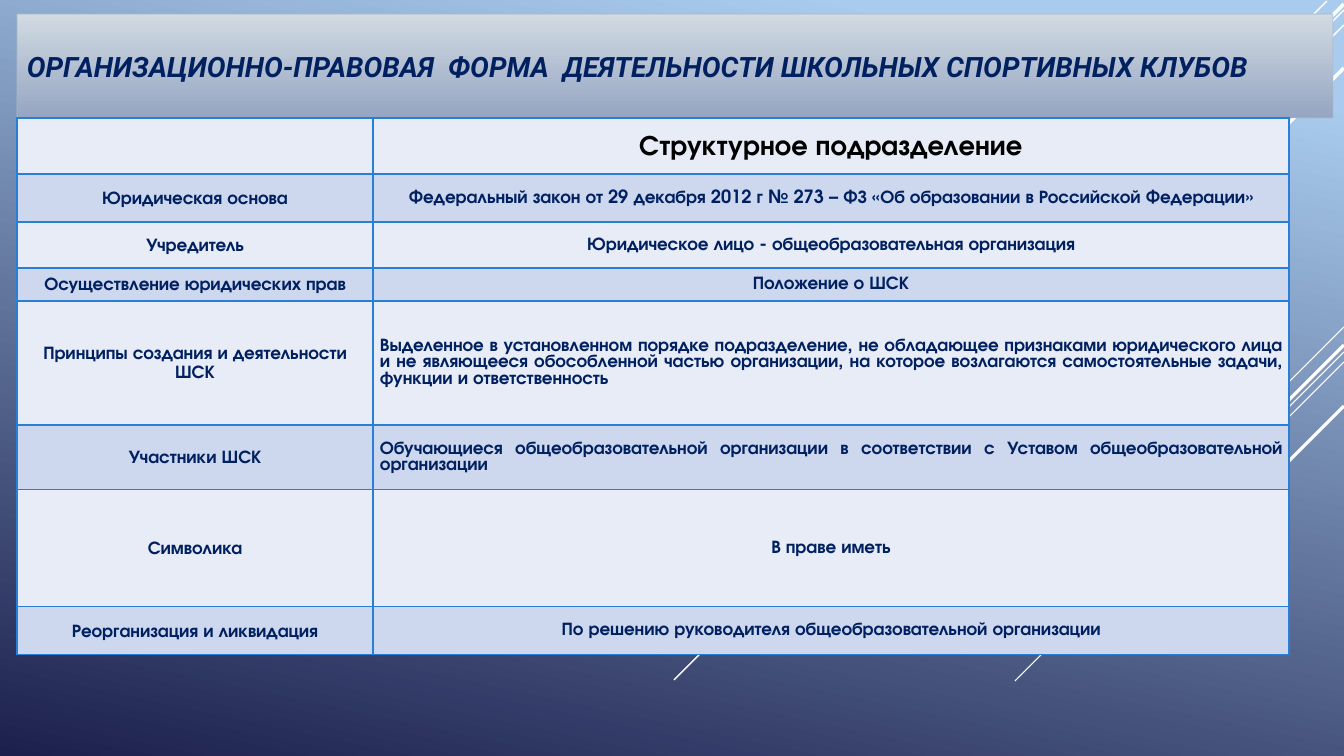
import lxml.etree
import pptx
import pptx.dml.color
import pptx.enum.shapes
import pptx.enum.text
import pptx.oxml
import pptx.oxml.ns
import pptx.util

RGBColor = pptx.dml.color.RGBColor
WHITE = RGBColor(0xFF, 0xFF, 0xFF)
BLACK = RGBColor(0x00, 0x00, 0x00)
NAVY = RGBColor(0x00, 0x20, 0x60)
SKY = RGBColor(0xA9, 0xCC, 0xEE)
MIDNIGHT = RGBColor(0x1C, 0x20, 0x4D)
SILVER = RGBColor(0xD2, 0xDB, 0xE2)
STEEL = RGBColor(0x95, 0xA5, 0xC3)
TITLE_EDGE = RGBColor(0xAA, 0xB8, 0xC2)
TABLE_BORDER = RGBColor(0x29, 0x7F, 0xD5)
ROW_FILLS = (RGBColor(0xE8, 0xEC, 0xF7), RGBColor(0xCD, 0xD8, 0xEF))

TITLE_FONT = "Roboto"
TABLE_FONT = "TeX Gyre Adventor"
CENTER = pptx.enum.text.PP_ALIGN.CENTER
JUSTIFY = pptx.enum.text.PP_ALIGN.JUSTIFY
MIDDLE = pptx.enum.text.MSO_ANCHOR.MIDDLE

WIDTH, HEIGHT = 1344, 756
TITLE = "ОРГАНИЗАЦИОННО-ПРАВОВАЯ  ФОРМА  ДЕЯТЕЛЬНОСТИ ШКОЛЬНЫХ СПОРТИВНЫХ КЛУБОВ"
COLUMN_WIDTHS = (356, 916)
TABLE_ROWS = (
    (56, "", "Структурное подразделение", CENTER),
    (48, "Юридическая основа",
     "Федеральный закон от 29 декабря 2012 г № 273 – ФЗ «Об образовании в Российской Федерации»", CENTER),
    (46, "Учредитель", "Юридическое лицо - общеобразовательная организация", CENTER),
    (33, "Осуществление юридических прав", "Положение о ШСК", CENTER),
    (124, "Принципы создания и деятельности ШСК",
     "Выделенное в установленном порядке подразделение, не обладающее признаками юридического лица "
     "и не являющееся обособленной частью организации, на которое возлагаются самостоятельные задачи, "
     "функции и ответственность", JUSTIFY),
    (65, "Участники ШСК",
     "Обучающиеся общеобразовательной организации в соответствии с Уставом общеобразовательной "
     "организации", JUSTIFY),
    (117, "Символика", "В праве иметь", CENTER),
    (48, "Реорганизация и ликвидация", "По решению руководителя общеобразовательной организации", CENTER),
)
DIAGONALS = (
    (1344, 327, 101, 0.75),
    (1344, 352, 329, 0.75),
    (1344, 362, 209, 0.75),
    (1344, 345, 192, 2.25),
    (1344, 406, 140, 2.25),
    (1327, 1, 420, 1),
    (1344, 10, 670, 1),
    (1344, 25, 546, 1),
    (1344, 4, 535, 2.5),
    (1344, 68, 479, 2.5),
)


def px(length):
    return pptx.util.Emu(round(length * 914400 / 100.8))


class ClubSlide:
    """Draws styled elements on one slide, with lengths in px."""

    def __init__(self, slide):
        self.slide = slide

    def gradient(self, fill, stops, angle):
        fill.gradient()
        fill.gradient_angle = 360 - angle
        for stop, (position, color) in zip(fill.gradient_stops, stops):
            stop.position = position
            stop.color.rgb = color

    def background(self):
        self.gradient(self.slide.background.fill, ((0.1, SKY), (1, MIDNIGHT)), 102)

    def diagonal(self, right, top, reach, weight):
        connector = self.slide.shapes.add_connector(
            pptx.enum.shapes.MSO_CONNECTOR.STRAIGHT,
            px(right), px(top), px(right - reach), px(top + reach))
        connector.line.color.rgb = WHITE
        connector.line.width = pptx.util.Pt(weight)
        lxml.etree.SubElement(connector._element.spPr, pptx.oxml.ns.qn("a:effectLst"))

    def text(self, text_frame, text, font, size, color, alignment, spacing=None, italic=False):
        text_frame.text = text
        paragraph = text_frame.paragraphs[0]
        paragraph.alignment = alignment
        paragraph.line_spacing = spacing
        for run in paragraph.runs:
            run.font.name = font
            run.font.size = pptx.util.Pt(size)
            run.font.bold = True
            run.font.italic = italic
            run.font.color.rgb = color

    def title(self, left, top, width, height, text):
        shape = self.slide.shapes.add_shape(
            pptx.enum.shapes.MSO_SHAPE.RECTANGLE, px(left), px(top), px(width), px(height))
        shape.shadow.inherit = False
        self.gradient(shape.fill, ((0, SILVER), (1, STEEL)), 90)
        shape.line.color.rgb = TITLE_EDGE
        shape.line.width = pptx.util.Pt(0.75)
        edge_color = shape.line._ln.find(".//" + pptx.oxml.ns.qn("a:srgbClr"))
        lxml.etree.SubElement(edge_color, pptx.oxml.ns.qn("a:alpha"), val="60000")
        shape.text_frame.word_wrap = True
        shape.text_frame.vertical_anchor = MIDDLE
        self.text(shape.text_frame, text, TITLE_FONT, 20, NAVY,
                  pptx.enum.text.PP_ALIGN.LEFT, italic=True)

    def borders(self, cell):
        properties = cell._tc.get_or_add_tcPr()
        for index, side in enumerate(("lnL", "lnR", "lnT", "lnB")):
            properties.insert(index, pptx.oxml.parse_xml(
                f'<a:{side} {pptx.oxml.ns.nsdecls("a")} w="12700"><a:solidFill>'
                f'<a:srgbClr val="{TABLE_BORDER}"/></a:solidFill></a:{side}>'))

    def cell(self, cell, fill, text, size, color, alignment, spacing):
        cell.fill.solid()
        cell.fill.fore_color.rgb = fill
        cell.vertical_anchor = MIDDLE
        cell.margin_left = cell.margin_right = px(7)
        cell.margin_top = cell.margin_bottom = 0
        self.text(cell.text_frame, text, TABLE_FONT, size, color, alignment, spacing)
        self.borders(cell)

    def table(self, left, top, column_widths, rows):
        height = sum(row[0] for row in rows)
        table = self.slide.shapes.add_table(
            len(rows), len(column_widths), px(left), px(top),
            px(sum(column_widths)), px(height)).table
        table.first_row = table.horz_banding = False
        for column, width in zip(table.columns, column_widths):
            column.width = px(width)
        for index, (row_height, label, value, alignment) in enumerate(rows):
            table.rows[index].height = px(row_height)
            fill = ROW_FILLS[index % 2]
            size, color, spacing = (13, NAVY, 1.0) if index else (20, BLACK, 1.15)
            self.cell(table.cell(index, 0), fill, label, 13, NAVY, CENTER, 1.15)
            self.cell(table.cell(index, 1), fill, value, size, color, alignment, spacing)


def main():
    presentation = pptx.Presentation()
    presentation.slide_width = px(WIDTH)
    presentation.slide_height = px(HEIGHT)
    club_slide = ClubSlide(presentation.slides.add_slide(presentation.slide_layouts[6]))
    club_slide.background()
    for diagonal in DIAGONALS:
        club_slide.diagonal(*diagonal)
    club_slide.title(17, 14, 1316, 104, TITLE)
    club_slide.table(17, 118, COLUMN_WIDTHS, TABLE_ROWS)
    presentation.save("out.pptx")


if __name__ == "__main__":
    main()
